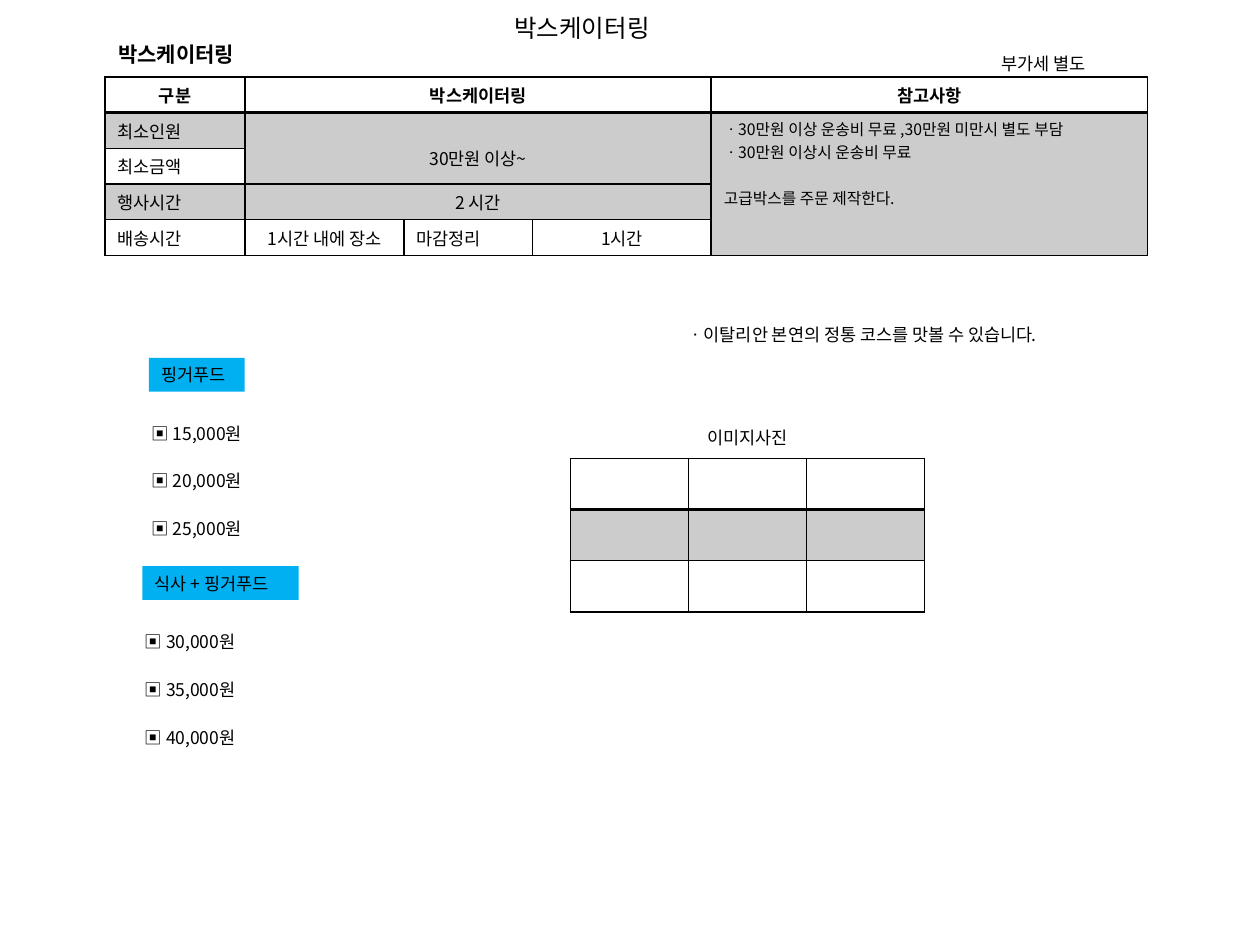
import pptx
import pptx.util
import pptx.dml.color
import pptx.enum.text
import pptx.enum.shapes
import lxml.etree

Pt = pptx.util.Pt
hue = pptx.dml.color.RGBColor.from_string
ALIGN = pptx.enum.text.PP_ALIGN
MID = pptx.enum.text.MSO_ANCHOR.MIDDLE
FONT = "Noto Sans CJK KR"
BLACK, GREY, BLUE = "000000", "CCCCCC", "00B0F0"
NS = "{http://schemas.openxmlformats.org/drawingml/2006/main}"


def write(para, text, size=10, bold=False, align=ALIGN.LEFT):
    para.alignment = align
    run = para.add_run()
    run.text = text
    font = run.font
    font.size, font.bold, font.name = Pt(size), bold, FONT
    font.color.rgb = hue(BLACK)
    east = lxml.etree.SubElement(run._r.get_or_add_rPr(), NS + "ea")
    east.set("typeface", FONT)


def grid(left, top, cols, rows, high, shaded):
    frame = slide.shapes.add_table(rows, len(cols), Pt(left), Pt(top),
                                   Pt(sum(cols)), Pt(rows * high))
    table = frame.table
    table.first_row = table.horz_banding = False
    for col, wide in zip(table.columns, cols):
        col.width = Pt(wide)
    for r, row in enumerate(table.rows):
        row.height = Pt(high)
        for c, cell in enumerate(row.cells):
            cell.margin_top = cell.margin_bottom = Pt(2.8)
            cell.vertical_anchor = MID
            # Black rules, heavier between the header and the body
            props = cell._tc.get_or_add_tcPr()
            for side in "LRTB":
                heavy = (r, side) in ((0, "B"), (1, "T"))
                line = lxml.etree.SubElement(props, NS + "ln" + side)
                line.set("w", str(Pt(2 if heavy else 1)))
                fill = lxml.etree.SubElement(line, NS + "solidFill")
                lxml.etree.SubElement(fill, NS + "srgbClr").set("val", BLACK)
            if (r, c) in shaded:
                cell.fill.solid()
                cell.fill.fore_color.rgb = hue(GREY)
            else:
                cell.fill.background()
    return table


deck = pptx.Presentation()
deck.slide_width, deck.slide_height = Pt(720), Pt(540)
slide = deck.slides.add_slide(deck.slide_layouts[5])

# Title
title = slide.shapes.title
title.left, title.top = Pt(286.6), Pt(3.6)
title.width, title.height = Pt(99.4), Pt(24.5)
frame = title.text_frame
frame.word_wrap = False
frame.auto_size = pptx.enum.text.MSO_AUTO_SIZE.NONE
frame.vertical_anchor = MID
write(frame.paragraphs[0], "박스케이터링", 14)

# Terms table
shaded = {(1, 0), (1, 1), (1, 4), (3, 0), (3, 1)}
terms = grid(60, 44, [80, 90.8, 73.6, 102, 249.4], 5, 20.4, shaded)
for r, c, r2, c2 in [(0, 1, 0, 3), (1, 1, 2, 3), (1, 4, 4, 4), (3, 1, 3, 3)]:
    terms.cell(r, c).merge(terms.cell(r2, c2))

for c, text in [(0, "구분"), (1, "박스케이터링"), (4, "참고사항")]:
    write(terms.cell(0, c).text_frame.paragraphs[0], text, 10, True, ALIGN.CENTER)
for r, text in enumerate(["최소인원", "최소금액", "행사시간", "배송시간"], 1):
    write(terms.cell(r, 0).text_frame.paragraphs[0], text)
write(terms.cell(4, 2).text_frame.paragraphs[0], "마감정리")
for r, c, text in [(1, 1, "30만원 이상~"), (3, 1, "2 시간"),
                   (4, 1, "1시간 내에 장소"), (4, 3, "1시간")]:
    write(terms.cell(r, c).text_frame.paragraphs[0], text, align=ALIGN.CENTER)
terms.cell(1, 1).margin_top = Pt(14)

# Notes
notes = terms.cell(1, 4)
notes.vertical_anchor = pptx.enum.text.MSO_ANCHOR.TOP
frame = notes.text_frame
for i, text in enumerate(["ㆍ30만원 이상 운송비 무료 ,30만원 미만시 별도 부담",
                          "ㆍ30만원 이상시 운송비 무료",
                          "고급박스를 주문 제작한다."]):
    para = frame.add_paragraph() if i else frame.paragraphs[0]
    write(para, text, 9)
para.space_before = Pt(13)

# Photo table
grid(326, 262, [67.4] * 3, 3, 29.2, {(1, c) for c in range(3)})

# Labels: left, top, width, height, text, size, bold, fill
labels = [
    (60.5, 20.2, 87, 21.6, "박스케이터링", 12, True, None),
    (565.2, 26.6, 68.4, 19.4, "부가세 별도", 10, False, None),
    (386, 181.4, 239.8, 19.4, "ㆍ이탈리안 본연의 정통 코스를 맛볼 수 있습니다.", 10, False, None),
    (397.4, 240.5, 64.8, 19.4, "이미지사진", 10, False, None),
    (85, 204.5, 54.8, 19.4, "핑거푸드", 10, False, BLUE),
    (81.4, 323.5, 89.2, 19.4, "식사 + 핑거푸드", 10, False, BLUE),
]
# Price lists
for left, top, costs in [(79.4, 237.8, ["15,000", "20,000", "25,000"]),
                         (75.6, 357, ["30,000", "35,000", "40,000"])]:
    for i, cost in enumerate(costs):
        labels.append((left, top + i * 27.3, 68.4, 19.4,
                       f"▣ {cost}원", 10, False, None))

for left, top, wide, high, text, size, bold, fill in labels:
    spot = Pt(left), Pt(top), Pt(wide), Pt(high)
    if fill:
        box = slide.shapes.add_shape(pptx.enum.shapes.MSO_SHAPE.RECTANGLE, *spot)
        box.shadow.inherit = False
        box.fill.solid()
        box.fill.fore_color.rgb = hue(fill)
        box.line.fill.background()
    else:
        box = slide.shapes.add_textbox(*spot)
    box.text_frame.word_wrap = False
    box.text_frame.vertical_anchor = MID
    write(box.text_frame.paragraphs[0], text, size, bold)

deck.save("out.pptx")
